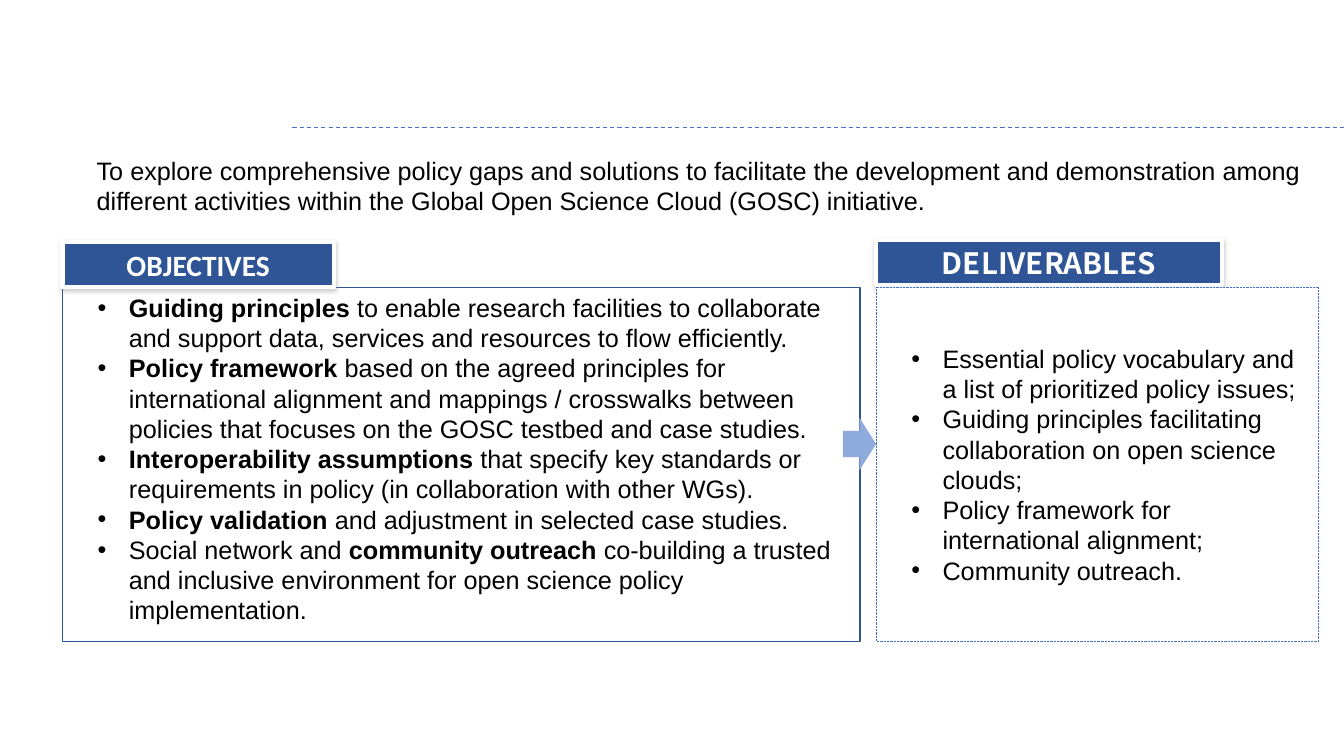
from lxml.etree import SubElement
from pptx import Presentation
from pptx.dml.color import RGBColor
from pptx.enum.dml import MSO_LINE
from pptx.enum.shapes import MSO_CONNECTOR, MSO_SHAPE
from pptx.enum.text import MSO_ANCHOR, PP_ALIGN
from pptx.oxml.ns import qn
from pptx.util import Inches, Pt

INTRO = ("To explore comprehensive policy gaps and solutions to facilitate the development "
         "and demonstration among different activities within the Global Open Science Cloud "
         "(GOSC) initiative.")
GOALS = [
    ("", "Guiding principles ", "to enable research facilities to collaborate and support data, "
     "services and resources to flow efficiently."),
    ("", "Policy framework", " based on the agreed principles for international alignment and "
     "mappings / crosswalks between policies that focuses on the GOSC testbed and case studies."),
    ("", "Interoperability assumptions ", "that specify key standards or requirements in policy "
     "(in collaboration with other WGs)."),
    ("", "Policy validation", " and adjustment in selected case studies."),
    ("Social network and ", "community outreach", " co-building a trusted and inclusive "
     "environment for open science policy implementation."),
]
RESULTS = [
    ("Essential policy vocabulary and a list of prioritized policy issues;",),
    ("Guiding principles facilitating collaboration on open science clouds;\u00a0",),
    ("Policy framework for international alignment;",),
    ("Community outreach.",),
]
COLOR = {"navy": "2F5597", "blue": "4472C4", "pale": "8FAADC",
         "white": "FFFFFF", "black": "000000", "gray": "808080"}
WIDE, HIGH = 13.33, 7.5
LEFT, SPLIT, TOP, DEEP = 0.62, 8.69, 2.85, 3.51
TAB = 0.45
ARROW = (0.33, 0.52)

deck = Presentation()
deck.slide_width, deck.slide_height = Inches(WIDE), Inches(HIGH)
slide = deck.slides.add_slide(deck.slide_layouts[6])


def tint(name):
    return RGBColor.from_string(COLOR[name])


def style(run, size, face, color, bold=False):
    font = run.font
    font.size, font.name, font.bold = Pt(size), face, bold
    font.color.rgb = tint(color)
    SubElement(font._element, qn("a:ea"), typeface=face)


def block(kind, x, y, w, h, fill=None, line=None, width=0.75):
    shape = slide.shapes.add_shape(kind, *map(Inches, (x, y, w, h)))
    shape.shadow.inherit = False
    if fill:
        shape.fill.solid()
        shape.fill.fore_color.rgb = tint(fill)
    else:
        shape.fill.background()
    if line:
        shape.line.color.rgb = tint(line)
        shape.line.width = Pt(width)
    else:
        shape.line.fill.background()
    return shape


def cast(shape):
    glow = shape._element.spPr.find(qn("a:effectLst"))
    shade = SubElement(glow, qn("a:outerShdw"), blurRad=str(Pt(3.1)), dist=str(Pt(1.6)),
                       dir="5400000", rotWithShape="0")
    tone = SubElement(shade, qn("a:srgbClr"), val=COLOR["gray"])
    SubElement(tone, qn("a:alpha"), val="38000")


def label(text, face, x, y, w):
    shape = block(MSO_SHAPE.RECTANGLE, x, y, w, TAB, "navy", "white", 3)
    cast(shape)
    frame = shape.text_frame
    frame.text = text
    frame.vertical_anchor = MSO_ANCHOR.TOP
    para = frame.paragraphs[0]
    para.alignment = PP_ALIGN.CENTER
    style(para.runs[0], 21, face, "white", True)


def bullets(shape, items, anchor):
    frame = shape.text_frame
    frame.word_wrap = True
    frame.vertical_anchor = anchor
    for n, parts in enumerate(items):
        para = frame.add_paragraph() if n else frame.paragraphs[0]
        para.alignment = PP_ALIGN.LEFT
        props = para._p.get_or_add_pPr()
        props.set("marL", str(Inches(0.56)))
        props.set("indent", str(Inches(-0.31)))
        SubElement(props, qn("a:buFont"), typeface="Arial")
        SubElement(props, qn("a:buChar"), char="•")
        for k, part in enumerate(parts):
            if part:
                run = para.add_run()
                run.text = part
                style(run, 18, "Arial", "black", k == 1)


rule = slide.shapes.add_connector(MSO_CONNECTOR.STRAIGHT, Inches(2.9), Inches(1.27),
                                  Inches(WIDE), Inches(1.27))
rule.line.color.rgb = tint("blue")
rule.line.width = Pt(0.75)
rule.line.dash_style = MSO_LINE.DASH
SubElement(rule._element.spPr, qn("a:effectLst"))

goals = block(MSO_SHAPE.RECTANGLE, LEFT, TOP, 7.91, DEEP, line="navy")
bullets(goals, GOALS, MSO_ANCHOR.TOP)
label("OBJECTIVES", "Calibri", LEFT, TOP - TAB, 2.69)
label("DELIVERABLES", "Noto Sans CJK SC", SPLIT, 2.38, 3.43)
results = block(MSO_SHAPE.RECTANGLE, SPLIT, TOP, 4.39, DEEP, "white", "blue", 0.5)
results.line.dash_style = MSO_LINE.ROUND_DOT
bullets(results, RESULTS, MSO_ANCHOR.MIDDLE)

intro = slide.shapes.add_textbox(*map(Inches, (LEFT, 1.49, 12.48, 0.71))).text_frame
intro.word_wrap = True
intro.text = INTRO
intro.paragraphs[0]._p.get_or_add_pPr().set("marL", str(Inches(0.24)))
style(intro.paragraphs[0].runs[0], 18, "Arial", "black")

wide, high = ARROW
block(MSO_SHAPE.RIGHT_ARROW, SPLIT - wide, TOP + (DEEP - high) / 2 - 0.2, wide, high, "pale")

deck.save("out.pptx")
